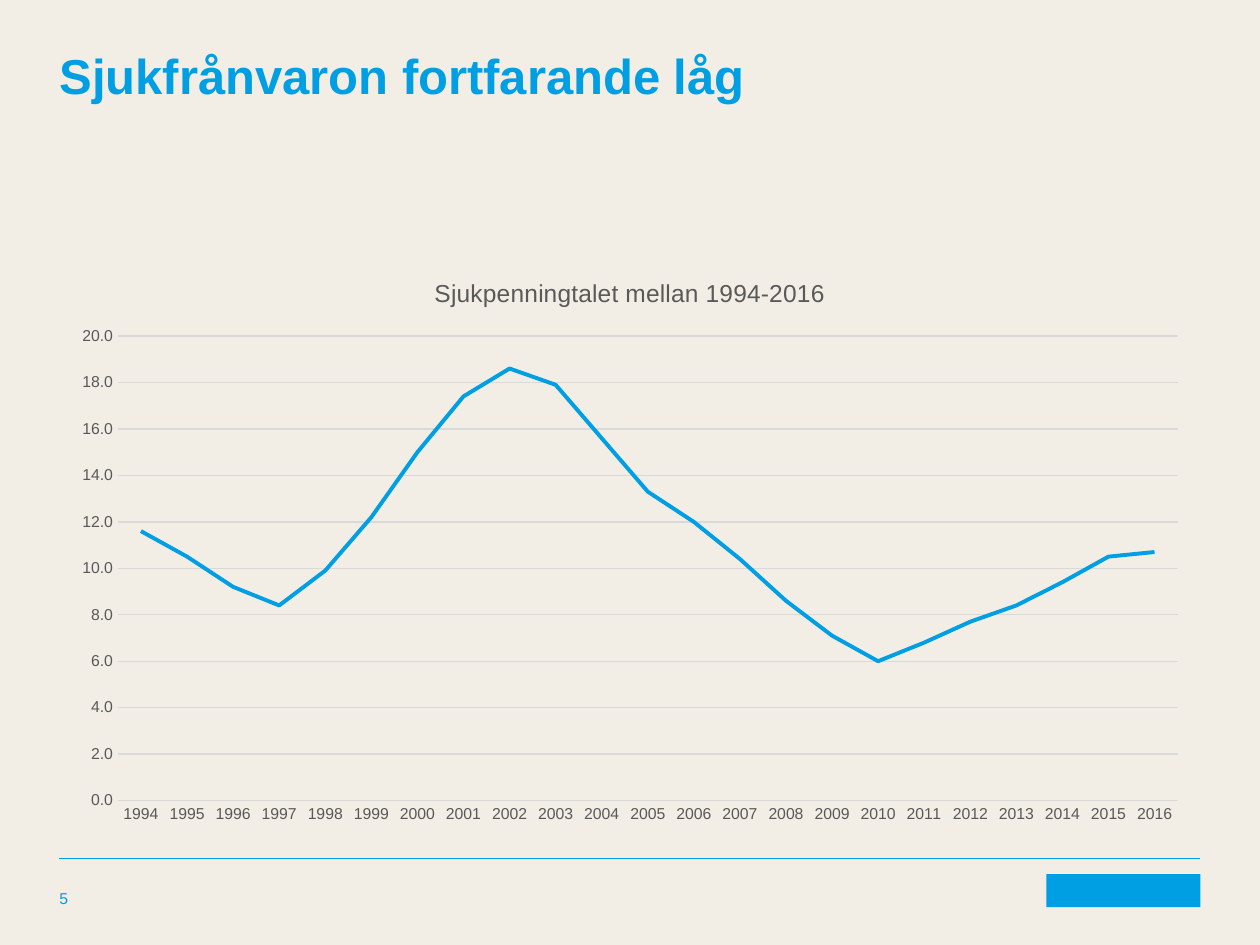
"""Build the slide on sickness absence with its line chart."""
from lxml import etree
from pptx import Presentation
from pptx.chart.data import CategoryChartData
from pptx.dml.color import RGBColor
from pptx.enum import chart as ec, shapes, text
from pptx.oxml import ns
from pptx.util import Pt

TITLE = "Sjukfrånvaron fortfarande låg"
PAGE = "5"
CHART_TITLE = "Sjukpenningtalet mellan 1994-2016"
FIRST_YEAR = 1994
DAYS = [11.6, 10.5, 9.2, 8.4, 9.9, 12.2, 15, 17.4, 18.6, 17.9, 15.6, 13.3,
        12, 10.4, 8.6, 7.1, 6, 6.8, 7.7, 8.4, 9.4, 10.5, 10.7]
BLUE, CREAM, GREY, GRID = "009FE4", "F2EEE6", "595959", "D9D9D9"
WIDTH, HEIGHT, MARGIN = 720, 540, 34
INNER = WIDTH - 2 * MARGIN
FOOT_TOP, FOOT_H, LOGO_W = 499.5, 19, 88


def rgb(value):
    return RGBColor.from_string(value)


def set_font(font, size, color, bold=False):
    font.name, font.size, font.bold = "Arial", Pt(size), bold
    font.color.rgb = rgb(color)


def set_line(line, color, width):
    line.color.rgb, line.width = rgb(color), Pt(width)


def add_text(s, words, box, size, bold, anchor):
    tf = s.shapes.add_textbox(*map(Pt, box)).text_frame
    tf.margin_left = tf.margin_top = tf.margin_right = tf.margin_bottom = 0
    tf.word_wrap, tf.vertical_anchor = True, anchor
    tf.text = words
    set_font(tf.paragraphs[0].runs[0].font, size, BLUE, bold)


def add_footer(s):
    y = Pt(490.5)
    rule = s.shapes.add_connector(shapes.MSO_CONNECTOR.STRAIGHT,
                                  Pt(MARGIN), y, Pt(WIDTH - MARGIN), y)
    set_line(rule.line, BLUE, 0.5)
    etree.SubElement(rule._element.spPr, ns.qn("a:effectLst"))
    logo = s.shapes.add_shape(shapes.MSO_SHAPE.RECTANGLE, Pt(WIDTH - MARGIN - LOGO_W),
                              Pt(FOOT_TOP), Pt(LOGO_W), Pt(FOOT_H))
    logo.shadow.inherit = False
    logo.fill.solid()
    logo.fill.fore_color.rgb = rgb(BLUE)
    logo.line.fill.background()


def add_line_chart(s):
    data = CategoryChartData(number_format="0.0")
    data.categories = [str(FIRST_YEAR + i) for i in range(len(DAYS))]
    data.add_series("Sjukpenningtalet", DAYS)
    chart = s.shapes.add_chart(ec.XL_CHART_TYPE.LINE, Pt(MARGIN), Pt(145.5),
                               Pt(INNER), Pt(332), data).chart
    set_font(chart.font, 10, GREY)
    chart.has_legend = False
    tf = chart.chart_title.text_frame
    tf.text = CHART_TITLE
    set_font(tf.paragraphs[0].runs[0].font, 14, GREY)
    chart.plots[0].vary_by_categories = False
    line = chart.plots[0].series[0]
    line.smooth = False
    line.marker.style = ec.XL_MARKER_STYLE.NONE
    set_line(line.format.line, BLUE, 2.25)
    years, days = chart.category_axis, chart.value_axis
    for axis in (years, days):
        axis.major_tick_mark = axis.minor_tick_mark = ec.XL_TICK_MARK.NONE
        set_font(axis.tick_labels.font, 9, GREY)
    set_line(years.format.line, GRID, 0.75)
    days.format.line.fill.background()
    days.minimum_scale, days.maximum_scale, days.major_unit = 0, 20, 2
    days.has_major_gridlines = True
    set_line(days.major_gridlines.format.line, GRID, 0.75)
    days.tick_labels.number_format = "0.0"
    days.tick_labels.number_format_is_linked = False


def main():
    prs = Presentation()
    prs.slide_width, prs.slide_height = Pt(WIDTH), Pt(HEIGHT)
    s = prs.slides.add_slide(prs.slide_layouts[6])
    s.background.fill.solid()
    s.background.fill.fore_color.rgb = rgb(CREAM)
    add_footer(s)
    add_text(s, TITLE, (MARGIN, 26, INNER, 119), 28, True, text.MSO_ANCHOR.TOP)
    add_text(s, PAGE, (MARGIN, FOOT_TOP, 170, FOOT_H), 9, False, text.MSO_ANCHOR.BOTTOM)
    add_line_chart(s)
    prs.save("out.pptx")


if __name__ == "__main__":
    main()
